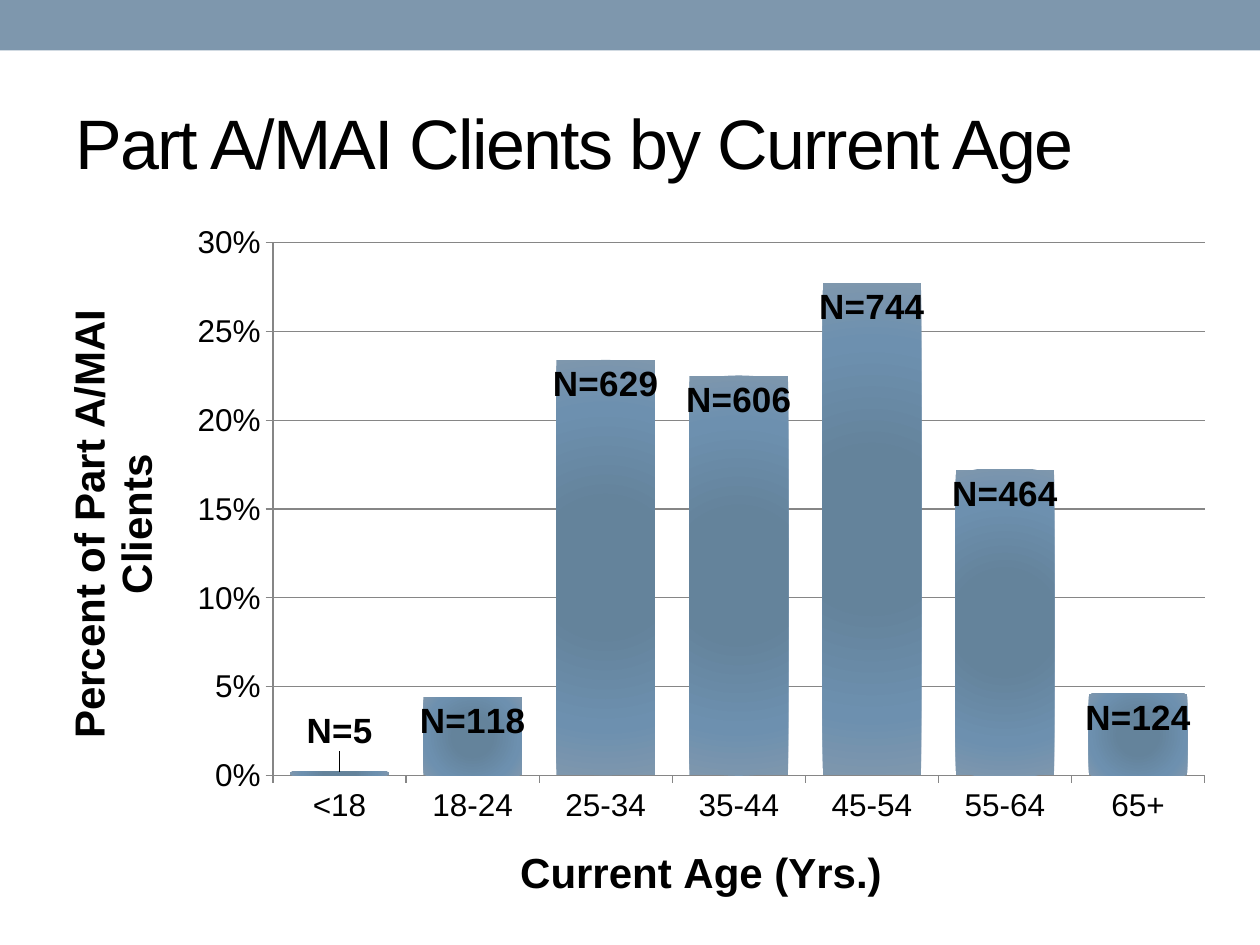
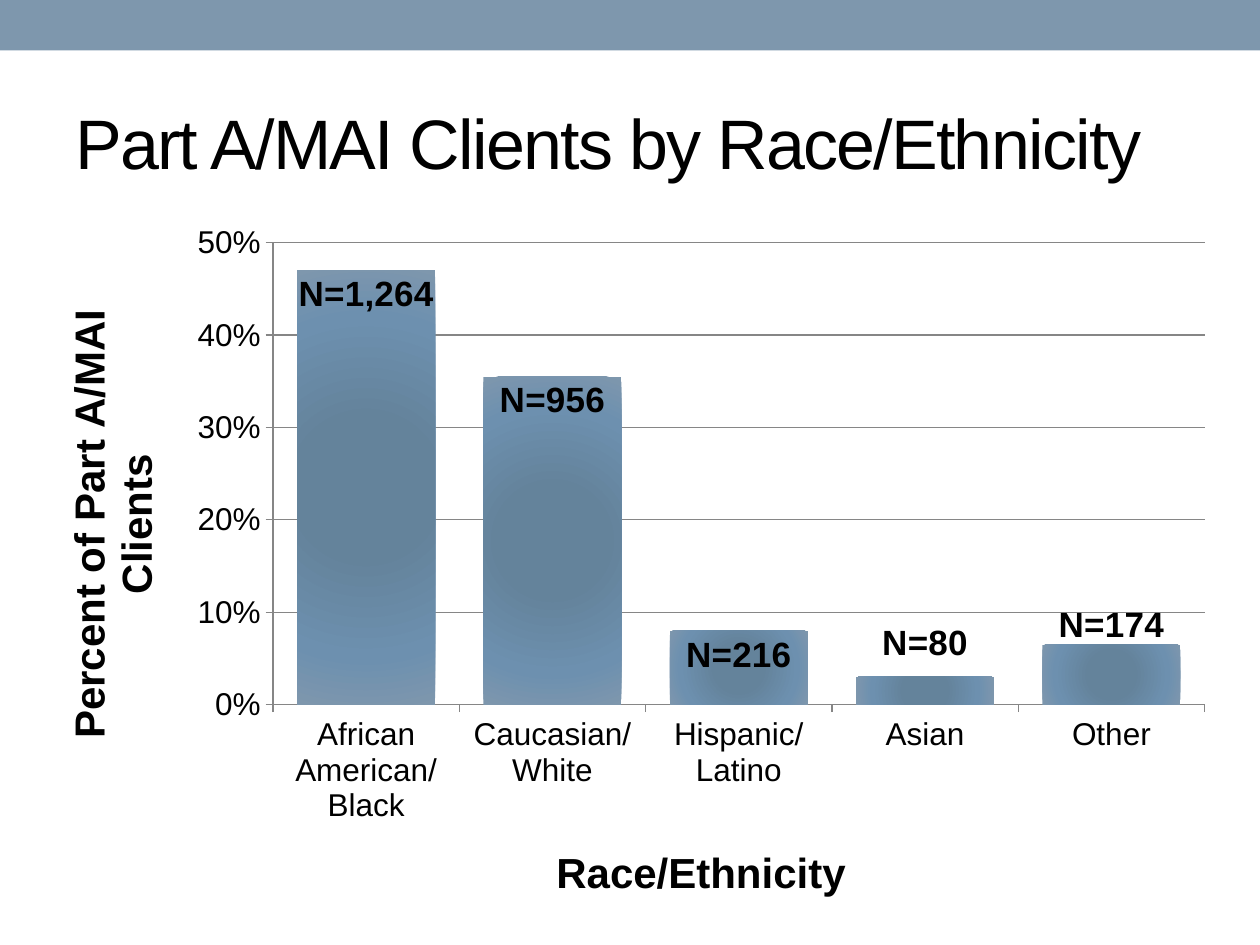
from dataclasses import dataclass

from lxml.etree import SubElement
from pptx import Presentation
from pptx.chart.data import CategoryChartData
from pptx.dml.color import RGBColor
from pptx.enum.chart import XL_CHART_TYPE as ChartType
from pptx.enum.chart import XL_LABEL_POSITION as LabelPosition
from pptx.enum.chart import XL_TICK_MARK as TickMark
from pptx.enum.shapes import MSO_SHAPE as ShapeKind
from pptx.enum.text import MSO_ANCHOR as Anchor
from pptx.oxml.ns import qn
from pptx.util import Inches, Pt

SLIDE_WIDTH, SLIDE_HEIGHT = Inches(10), Inches(7.5)


@dataclass(frozen=True)
class Theme:
    font: str = "Arial"
    text: str = "000000"
    band: str = "7E97AD"
    rule: str = "868686"
    bar_stops: tuple = ((0, "64839B"), (30, "64839B"), (75, "6D90AF"), (100, "7E97AD"))
    title_size: int = 40
    axis_title_size: int = 24
    label_size: int = 20
    tick_size: int = 18
    title_spacing: int = -1


@dataclass(frozen=True)
class Box:
    """A rectangle in shares of the slide's width and height."""
    left: float
    top: float
    width: float
    height: float

    def lengths(self) -> tuple:
        return (int(self.left * SLIDE_WIDTH), int(self.top * SLIDE_HEIGHT),
                int(self.width * SLIDE_WIDTH), int(self.height * SLIDE_HEIGHT))


@dataclass(frozen=True)
class Bar:
    """One column; lift raises its label by a share of the chart's height."""
    category: str
    share: float
    label: str
    lift: float = 0


@dataclass(frozen=True)
class ClientSlide:
    title: str
    category_title: str
    maximum: float
    step: float
    bars: tuple


THEME = Theme()
BAND = Box(0, 0, 1, 0.4 / 7.5)
TITLE = Box(0.05, 0.58 / 7.5, 0.925, 1.08 / 7.5)
CHART = Box(0.025, 1.67 / 7.5, 0.95, 5.72 / 7.5)
VALUE_TITLE = "Percent of Part A/MAI Clients"

SLIDES = (
    ClientSlide("Part A/MAI Clients by Current Age", "Current Age (Yrs.)", 0.3, 0.05, (
        Bar("<18", 0.002, "N=5", 0.09),
        Bar("18-24", 0.044, "N=118"),
        Bar("25-34", 0.234, "N=629"),
        Bar("35-44", 0.225, "N=606"),
        Bar("45-54", 0.277, "N=744"),
        Bar("55-64", 0.172, "N=464"),
        Bar("65+", 0.046, "N=124"),
    )),
    ClientSlide("Part A/MAI Clients by Race/Ethnicity", "Race/Ethnicity", 0.5, 0.1, (
        Bar("African American/ Black", 0.47, "N=1,264"),
        Bar("Caucasian/ White", 0.355, "N=956"),
        Bar("Hispanic/ Latino", 0.08, "N=216"),
        Bar("Asian", 0.03, "N=80", 0.08),
        Bar("Other", 0.065, "N=174", 0.06),
    )),
)


def style_font(font, size: int, bold: bool = False) -> None:
    font.name = THEME.font
    font.size = Pt(size)
    font.bold = bold
    font.color.rgb = RGBColor.from_string(THEME.text)


def style_rule(line) -> None:
    line.color.rgb = RGBColor.from_string(THEME.rule)
    line.width = Pt(0.75)


def add_band(slide) -> None:
    band = slide.shapes.add_shape(ShapeKind.RECTANGLE, *BAND.lengths())
    band.shadow.inherit = False
    band.fill.solid()
    band.fill.fore_color.rgb = RGBColor.from_string(THEME.band)
    band.line.fill.background()


def add_title(slide, text: str) -> None:
    frame = slide.shapes.add_textbox(*TITLE.lengths()).text_frame
    frame.word_wrap = True
    frame.vertical_anchor = Anchor.MIDDLE
    paragraph = frame.paragraphs[0]
    run = paragraph.add_run()
    run.text = text
    style_font(paragraph.font, THEME.title_size)
    run._r.get_or_add_rPr().set("spc", str(THEME.title_spacing * 100))


def style_axis(axis, title: str) -> None:
    axis.has_title = True
    frame = axis.axis_title.text_frame
    frame.text = title
    style_font(frame.paragraphs[0].font, THEME.axis_title_size, bold=True)
    axis.major_tick_mark = TickMark.OUTSIDE
    axis.minor_tick_mark = TickMark.NONE
    style_font(axis.tick_labels.font, THEME.tick_size)
    style_rule(axis.format.line)


def fill_radially(series) -> None:
    """Shade the columns from a dark centre out to the band colour."""
    series.format.fill.solid()
    properties = series._element.find(qn("c:spPr"))
    solid = properties.find(qn("a:solidFill"))
    gradient = SubElement(properties, qn("a:gradFill"), rotWithShape="1")
    properties.replace(solid, gradient)
    stops = SubElement(gradient, qn("a:gsLst"))
    for percent, color in THEME.bar_stops:
        stop = SubElement(stops, qn("a:gs"), pos=str(percent * 1000))
        SubElement(stop, qn("a:srgbClr"), val=color)
    circle = SubElement(gradient, qn("a:path"), path="circle")
    SubElement(circle, qn("a:fillToRect"),
               {side: "50000" for side in ("l", "t", "r", "b")})


def lift_label(series, index: int, lift: float) -> None:
    for label in series._element.iter(qn("c:dLbl")):
        position = label.find(qn("c:idx"))
        if position.get("val") == str(index):
            layout = SubElement(label, qn("c:layout"))
            position.addnext(layout)
            manual = SubElement(layout, qn("c:manualLayout"))
            SubElement(manual, qn("c:x"), val="0")
            SubElement(manual, qn("c:y"), val=str(-lift))


def label_bars(series, bars: tuple) -> None:
    labels = series.data_labels
    labels.show_value = True
    labels.number_format = "0.0%"
    labels.number_format_is_linked = False
    labels.position = LabelPosition.INSIDE_END
    style_font(labels.font, THEME.label_size, bold=True)
    for index, bar in enumerate(bars):
        label = series.points[index].data_label
        run = label.text_frame.paragraphs[0].add_run()
        run.text = bar.label
        style_font(run.font, THEME.label_size, bold=True)
        label.position = LabelPosition.INSIDE_END
        if bar.lift:
            lift_label(series, index, bar.lift)


def add_client_chart(slide, content: ClientSlide) -> None:
    data = CategoryChartData(number_format="0.0%")
    data.categories = [bar.category for bar in content.bars]
    data.add_series("Series 1", [bar.share for bar in content.bars])
    chart = slide.shapes.add_chart(
        ChartType.COLUMN_STACKED, *CHART.lengths(), data).chart
    chart.has_title = False
    chart.has_legend = False
    style_font(chart.font, THEME.tick_size)

    style_axis(chart.category_axis, content.category_title)
    value_axis = chart.value_axis
    style_axis(value_axis, VALUE_TITLE)
    value_axis.minimum_scale = 0
    value_axis.maximum_scale = content.maximum
    value_axis.major_unit = content.step
    value_axis.tick_labels.number_format = "0%"
    value_axis.tick_labels.number_format_is_linked = False
    value_axis.has_major_gridlines = True
    style_rule(value_axis.major_gridlines.format.line)

    plot = chart.plots[0]
    plot.gap_width = 35
    plot.overlap = 100
    plot.vary_by_categories = False
    fill_radially(plot.series[0])
    label_bars(plot.series[0], content.bars)


def main() -> None:
    presentation = Presentation()
    presentation.slide_width = SLIDE_WIDTH
    presentation.slide_height = SLIDE_HEIGHT
    blank = presentation.slide_layouts[6]
    for content in SLIDES:
        slide = presentation.slides.add_slide(blank)
        add_band(slide)
        add_title(slide, content.title)
        add_client_chart(slide, content)
    presentation.save("out.pptx")


if __name__ == "__main__":
    main()
